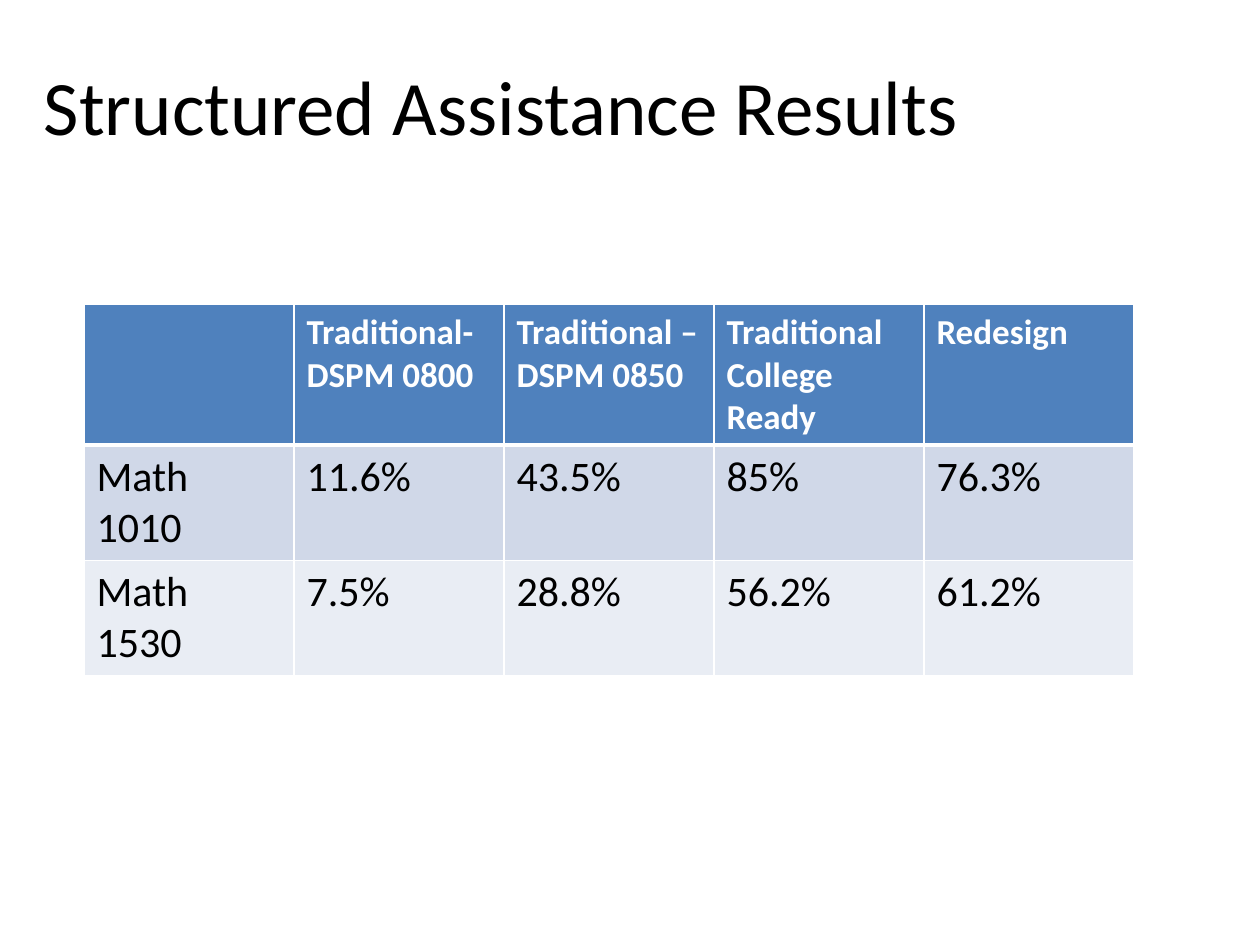
"""Build the Structured Assistance Results slide."""
from lxml import etree
from pptx import Presentation
from pptx.dml.color import RGBColor
from pptx.enum import text
from pptx.oxml import ns
from pptx.util import Pt

TITLE = "Structured Assistance Results"
ROWS = [
    ["", "Traditional- DSPM 0800", "Traditional – DSPM 0850",
     "Traditional College Ready", "Redesign"],
    ["Math 1010", "11.6%", "43.5%", "85%", "76.3%"],
    ["Math 1530", "7.5%", "28.8%", "56.2%", "61.2%"],
]
HEAD = {"high": 80.4, "fill": "4F81BD", "size": 20, "ink": "FFFFFF", "bold": True, "rule": 3}
BODY = {"high": 65.8, "size": 24, "ink": "000000", "bold": False, "rule": 1}
LOOKS = [HEAD, BODY | {"fill": "D0D8E8", "top": 3}, BODY | {"fill": "E9EDF4"}]
LEFT, TOP, WIDE = 48, 174, 120


def paint(hue):
    return RGBColor.from_string(hue)


def style(para, size, ink, bold=False):
    font = para.font
    font.name, font.size, font.bold = "Calibri", Pt(size), bold
    font.color.rgb = paint(ink)


def edge(cell, side, width):
    line = etree.SubElement(cell._tc.get_or_add_tcPr(), ns.qn(f"a:ln{side}"), w=str(Pt(width)))
    fill = etree.SubElement(line, ns.qn("a:solidFill"))
    etree.SubElement(fill, ns.qn("a:srgbClr"), val="FFFFFF")


def add_title(slide):
    box = slide.shapes.add_textbox(Pt(18), Pt(30), Pt(612), Pt(60))
    frame = box.text_frame
    frame.word_wrap = True
    frame.vertical_anchor = text.MSO_ANCHOR.MIDDLE
    frame.text = TITLE
    style(frame.paragraphs[0], 44, "000000")


def add_grid(slide):
    count = len(ROWS[0])
    high = sum(look["high"] for look in LOOKS)
    grid = slide.shapes.add_table(
        len(ROWS), count, Pt(LEFT), Pt(TOP), Pt(WIDE * count), Pt(high)).table
    for col in grid.columns:
        col.width = Pt(WIDE)
    for row, words, look in zip(grid.rows, ROWS, LOOKS):
        row.height = Pt(look["high"])
        for cell, word in zip(row.cells, words):
            for side, width in zip("LRTB", (1, 1, look.get("top", 1), look["rule"])):
                edge(cell, side, width)
            cell.fill.solid()
            cell.fill.fore_color.rgb = paint(look["fill"])
            cell.text = word
            style(cell.text_frame.paragraphs[0], look["size"], look["ink"], look["bold"])


def main():
    deck = Presentation()
    deck.slide_width, deck.slide_height = Pt(720), Pt(540)
    slide = deck.slides.add_slide(deck.slide_layouts[6])
    add_title(slide)
    add_grid(slide)
    deck.save("out.pptx")


if __name__ == "__main__":
    main()
